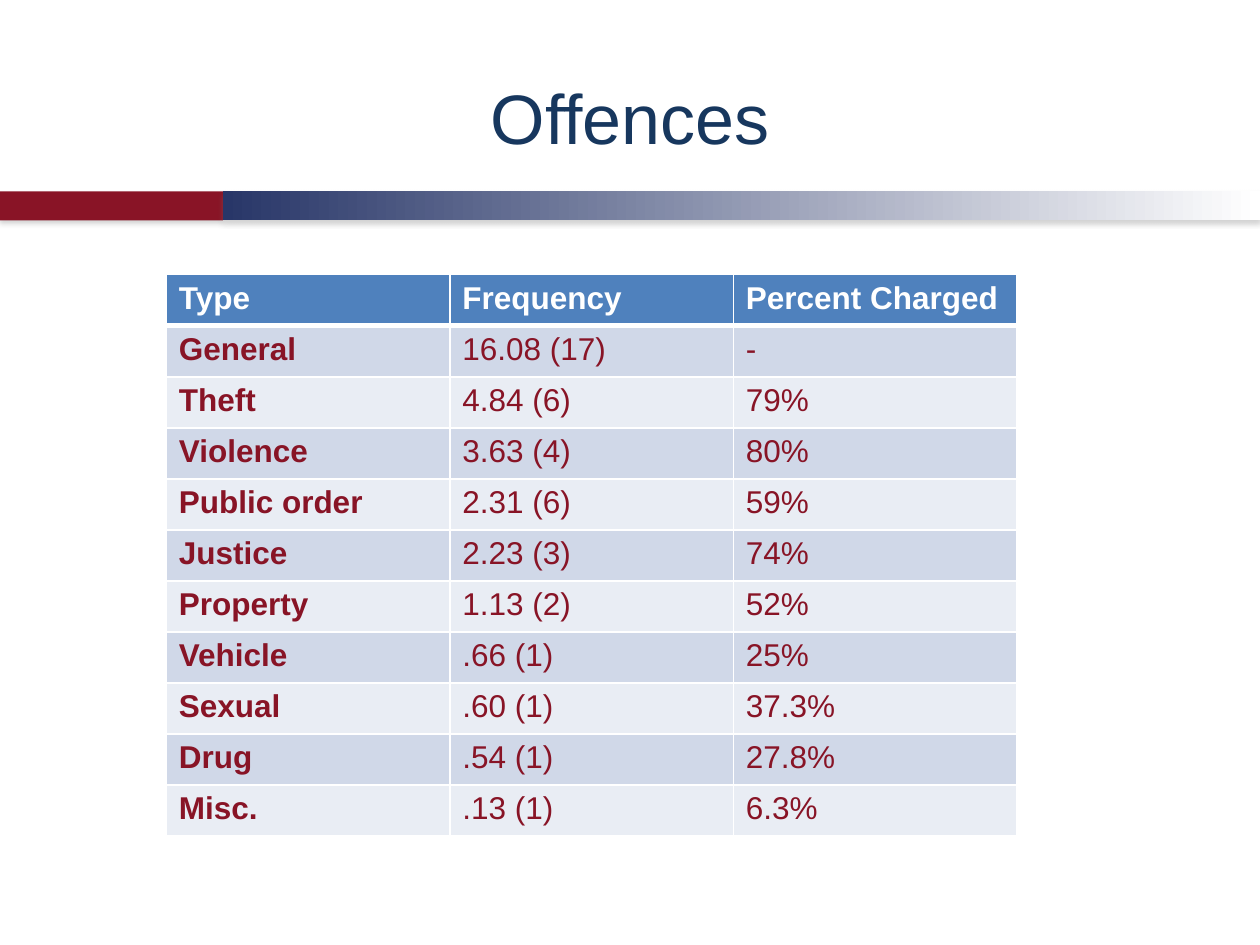
import lxml.etree
import pptx
import pptx.dml.color
import pptx.enum.shapes
import pptx.enum.text
import pptx.oxml
import pptx.oxml.ns
import pptx.util
from pptx.util import Inches

TITLE = "Offences"
HEADINGS = ("Type", "Frequency", "Percent Charged")
OFFENCES = [
    ("General", "16.08 (17)", "-"),
    ("Theft", "4.84 (6)", "79%"),
    ("Violence", "3.63 (4)", "80%"),
    ("Public order", "2.31 (6)", "59%"),
    ("Justice", "2.23 (3)", "74%"),
    ("Property", "1.13 (2)", "52%"),
    ("Vehicle", ".66 (1)", "25%"),
    ("Sexual", ".60 (1)", "37.3%"),
    ("Drug", ".54 (1)", "27.8%"),
    ("Misc.", ".13 (1)", "6.3%"),
]
THEME = {
    "font": "Arial",
    "title_size": 40,
    "table_size": 18,
    "title": "17375E",
    "red": "891426",
    "body": "881426",
    "navy": "283668",
    "white": "FFFFFF",
    "shadow": "808080",
    "header": "4F81BD",
    "bands": ("D0D8E8", "E9EDF4"),
}
SLIDE_WIDTH, SLIDE_HEIGHT = 10, 7.5
BAR_TOP, BAR_HEIGHT, BAR_SPLIT = 1.52, 0.23, 1.77
TABLE_LEFT, TABLE_TOP, TABLE_WIDTH, TABLE_HEIGHT = 1.32, 2.18, 6.75, 4.46
THIN_RULE, HEADER_RULE = 1, 3


def rgb(value):
    return pptx.dml.color.RGBColor.from_string(value)


def write(frame, text, *, size, color, bold=False, align=None, anchor=None):
    frame.word_wrap = True
    if anchor is not None:
        frame.vertical_anchor = anchor
    paragraph = frame.paragraphs[0]
    paragraph.alignment = align
    run = paragraph.add_run()
    run.text = text
    run.font.name = THEME["font"]
    run.font.size = pptx.util.Pt(size)
    run.font.bold = bold
    run.font.color.rgb = rgb(color)


def add_bar(slide, left, right, colors):
    bar = slide.shapes.add_shape(
        pptx.enum.shapes.MSO_SHAPE.RECTANGLE,
        Inches(left), Inches(BAR_TOP), Inches(right - left), Inches(BAR_HEIGHT))
    bar.line.fill.background()
    if len(colors) == 1:
        bar.fill.solid()
        bar.fill.fore_color.rgb = rgb(colors[0])
    else:
        bar.fill.gradient()
        bar.fill.gradient_angle = 0
        for stop, position, color in zip(bar.fill.gradient_stops, (0, 1), colors):
            stop.position = position
            stop.color.rgb = rgb(color)
    bar.shadow.inherit = False
    effects = bar.element.spPr.find(pptx.oxml.ns.qn("a:effectLst"))
    effects.append(pptx.oxml.parse_xml(
        f'<a:outerShdw {pptx.oxml.ns.nsdecls("a")} blurRad="{pptx.util.Pt(3.1)}" '
        f'dist="{pptx.util.Pt(1.8)}" dir="5400000" rotWithShape="0">'
        f'<a:srgbClr val="{THEME["shadow"]}"><a:alpha val="35000"/></a:srgbClr>'
        '</a:outerShdw>'))


def set_borders(cell, top, bottom):
    properties = cell._tc.get_or_add_tcPr()
    sides = {"lnL": THIN_RULE, "lnR": THIN_RULE, "lnT": top, "lnB": bottom}
    for index, (side, width) in enumerate(sides.items()):
        properties.insert(index, pptx.oxml.parse_xml(
            f'<a:{side} {pptx.oxml.ns.nsdecls("a")} w="{pptx.util.Pt(width)}">'
            f'<a:solidFill><a:srgbClr val="{THEME["white"]}"/></a:solidFill></a:{side}>'))


def add_offence_table(slide):
    records = [HEADINGS, *OFFENCES]
    table = slide.shapes.add_table(
        len(records), len(HEADINGS), Inches(TABLE_LEFT), Inches(TABLE_TOP),
        Inches(TABLE_WIDTH), Inches(TABLE_HEIGHT)).table
    for row, record in enumerate(records):
        heading = row == 0
        fill = THEME["header"] if heading else THEME["bands"][(row - 1) % 2]
        for column, text in enumerate(record):
            cell = table.cell(row, column)
            cell.fill.solid()
            cell.fill.fore_color.rgb = rgb(fill)
            set_borders(cell, HEADER_RULE if row == 1 else THIN_RULE,
                        HEADER_RULE if heading else THIN_RULE)
            write(cell.text_frame, text, size=THEME["table_size"],
                  color=THEME["white"] if heading else THEME["body"],
                  bold=heading or column == 0)


def main():
    deck = pptx.Presentation()
    deck.slide_width = Inches(SLIDE_WIDTH)
    deck.slide_height = Inches(SLIDE_HEIGHT)
    slide = deck.slides.add_slide(deck.slide_layouts[6])
    add_bar(slide, 0, BAR_SPLIT, [THEME["red"]])
    add_bar(slide, BAR_SPLIT, SLIDE_WIDTH, [THEME["navy"], THEME["white"]])
    title = slide.shapes.add_textbox(Inches(0.5), Inches(0.3), Inches(9), Inches(1.25))
    write(title.text_frame, TITLE, size=THEME["title_size"], color=THEME["title"],
          align=pptx.enum.text.PP_ALIGN.CENTER,
          anchor=pptx.enum.text.MSO_ANCHOR.MIDDLE)
    add_offence_table(slide)
    deck.save("out.pptx")


if __name__ == "__main__":
    main()
